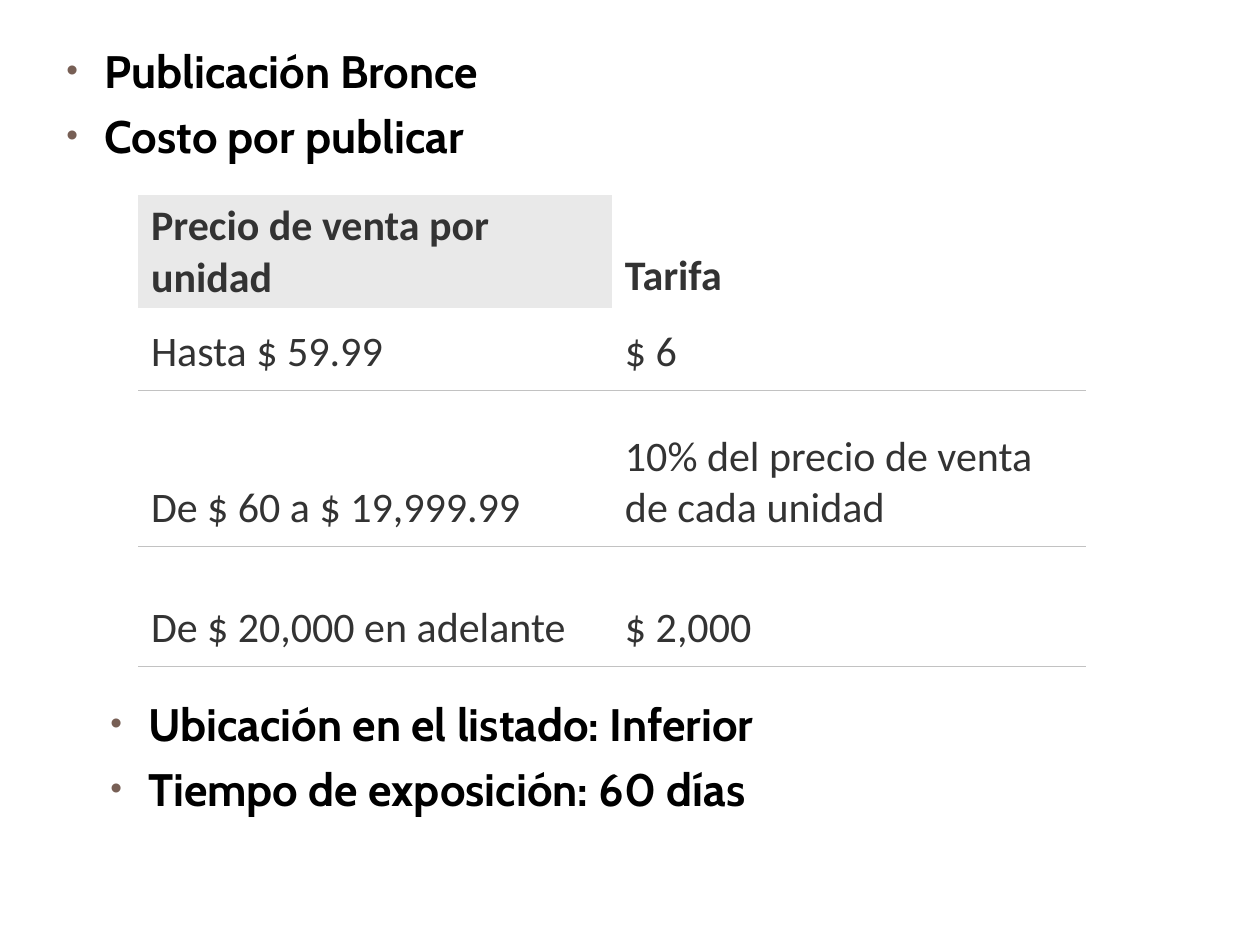
import pptx
import pptx.dml.color
import pptx.enum.text
import pptx.oxml
import pptx.oxml.ns
import pptx.util

# Content
TOP_POINTS = ["Publicación Bronce", "Costo por publicar"]
BOTTOM_POINTS = ["Ubicación en el listado: Inferior", "Tiempo de exposición: 60 días"]
RATES = [
    ("Precio de venta por unidad", "Tarifa"),
    ("Hasta $ 59.99", "$ 6"),
    ("De $ 60 a $ 19,999.99", "10% del precio de venta\nde cada unidad"),
    ("De $ 20,000 en adelante", "$ 2,000"),
]

# Layout in px
PX = 914400 // 126
TOP_BOX = (54, 37, 586, 180)
BOTTOM_BOX = (98, 690, 745, 134)
TABLE_LEFT, TABLE_TOP = 138, 195
COL_WIDTH = 474
ROW_HEIGHTS = [108, 83, 156, 120]
INDENT = 38
PAD_X, PAD_HEADER, PAD_BODY = 13, 6, 13

# Formats
POINT_FONT = {"name": "Cabin", "size": pptx.util.Pt(26), "bold": True}
HEADER_FONT = {"name": "Calibri", "size": pptx.util.Pt(24), "bold": True}
BODY_FONT = {**HEADER_FONT, "bold": False}
BLACK, DARK, BROWN, PALE, RULE = "000000", "333333", "775F55", "E9E9E9", "C2C2C2"


def px(*values):
    return [pptx.util.Emu(v * PX) for v in values]


def rgb(value):
    return pptx.dml.color.RGBColor.from_string(value)


def xml(tag, inner="", attrs=""):
    ns = pptx.oxml.ns.nsdecls("a")
    return pptx.oxml.parse_xml(f"<a:{tag} {ns} {attrs}>{inner}</a:{tag}>")


def write(p, text, font, color):
    p.text = text
    for r in p.runs:
        for name, value in font.items():
            setattr(r.font, name, value)
        r.font.color.rgb = rgb(color)


def add_points(s, box, points):
    tf = s.shapes.add_textbox(*px(*box)).text_frame
    tf.word_wrap = True
    for i, text in enumerate(points):
        p = tf.paragraphs[0] if i == 0 else tf.add_paragraph()
        pPr = p._p.get_or_add_pPr()
        pPr.set("marL", str(INDENT * PX))
        pPr.set("indent", str(-INDENT * PX))
        pPr.append(xml("buClr", f'<a:srgbClr val="{BROWN}"/>'))
        pPr.append(xml("buSzPct", attrs='val="73000"'))
        pPr.append(xml("buFont", attrs='typeface="Arial"'))
        pPr.append(xml("buChar", attrs='char="•"'))
        if i:
            p.space_before = pptx.util.Pt(6)
        write(p, text, POINT_FONT, BLACK)


def set_borders(cell, ruled_sides):
    tcPr = cell._tc.get_or_add_tcPr()
    for i, side in enumerate("LRTB"):
        if side in ruled_sides:
            fill = f'<a:solidFill><a:srgbClr val="{RULE}"/></a:solidFill>'
        else:
            fill = "<a:noFill/>"
        tcPr.insert(i, xml(f"ln{side}", fill, 'w="12700"'))


def add_rates(s):
    cols = len(RATES[0])
    place = px(TABLE_LEFT, TABLE_TOP, COL_WIDTH * cols, sum(ROW_HEIGHTS))
    table = s.shapes.add_table(len(RATES), cols, *place).table
    table.first_row = table.horz_banding = False
    for row, height in zip(table.rows, px(*ROW_HEIGHTS)):
        row.height = height
    for i, texts in enumerate(RATES):
        header = i == 0
        pad_x, pad_y = px(PAD_X, PAD_HEADER if header else PAD_BODY)
        cell_format = {
            "margin_left": pad_x, "margin_right": pad_x,
            "margin_top": pad_y, "margin_bottom": pad_y,
            "vertical_anchor": pptx.enum.text.MSO_ANCHOR.BOTTOM,
        }
        for j, text in enumerate(texts):
            cell = table.cell(i, j)
            for name, value in cell_format.items():
                setattr(cell, name, value)
            if header and j == 0:
                cell.fill.solid()
                cell.fill.fore_color.rgb = rgb(PALE)
            else:
                cell.fill.background()
            set_borders(cell, "" if header else "B" if i == 1 else "TB")
            p = cell.text_frame.paragraphs[0]
            p.space_after = pptx.util.Pt(10)
            write(p, text, HEADER_FONT if header else BODY_FONT, DARK)


def main():
    prs = pptx.Presentation()
    prs.slide_width, prs.slide_height = pptx.util.Inches(10), pptx.util.Inches(7.5)
    s = prs.slides.add_slide(prs.slide_layouts[6])
    add_points(s, TOP_BOX, TOP_POINTS)
    add_rates(s)
    add_points(s, BOTTOM_BOX, BOTTOM_POINTS)
    prs.save("out.pptx")


if __name__ == "__main__":
    main()
